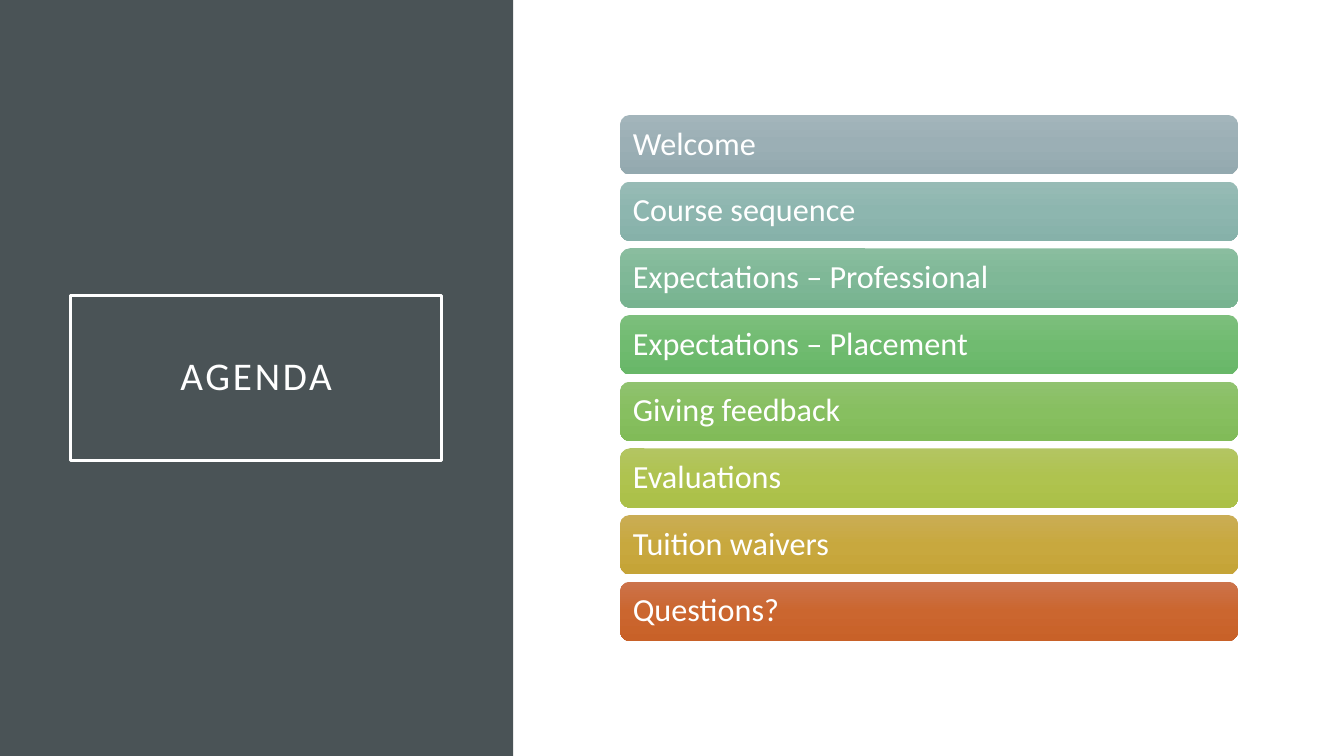
from copy import deepcopy

from pptx import Presentation
from pptx.dml.color import RGBColor
from pptx.enum.shapes import MSO_SHAPE
from pptx.enum.text import MSO_ANCHOR, PP_ALIGN
from pptx.oxml.ns import qn
from pptx.util import Inches, Pt

# Content: label, then top, middle and bottom colour of its bar
TITLE = "AGENDA"
ITEMS = [
    ("Welcome", "A3B5BB", "9BAFB5", "93A9AF"),
    ("Course sequence", "97BBB5", "8DB6AF", "86B1A9"),
    ("Expectations – Professional", "8ABD9F", "7FB897", "77B390"),
    ("Expectations – Placement", "7DBF7D", "70BB70", "68B768"),
    ("Giving feedback", "90C26F", "87BF60", "81BB58"),
    ("Evaluations", "B3C562", "AFC34F", "ABC047"),
    ("Tuition waivers", "CAAD55", "C8A83E", "C5A437"),
    ("Questions?", "CC734B", "CB662F", "C86128"),
]
WHITE = RGBColor(0xFF, 0xFF, 0xFF)
SLATE = RGBColor(0x4A, 0x53, 0x56)
FONT = "Calibri"

# Layout in inches
LEFT, WIDTH, HEIGHT = 6.15, 6.13, 0.59
FIRST, LAST = 1.14, 5.77
STEP = (LAST - FIRST) / (len(ITEMS) - 1)


def add_box(kind, left, top, width, height):
    box = slide.shapes.add_shape(
        kind, Inches(left), Inches(top), Inches(width), Inches(height))
    box.shadow.inherit = False
    box.line.fill.background()
    return box


def set_text(box, text, size, align, inset):
    frame = box.text_frame
    frame.text = text
    frame.word_wrap = True
    frame.vertical_anchor = MSO_ANCHOR.MIDDLE
    frame.margin_left = frame.margin_right = Inches(inset)
    frame.margin_top = frame.margin_bottom = Inches(0.1)
    para = frame.paragraphs[0]
    para.alignment = align
    para.line_spacing = 0.9
    run = para.runs[0]
    run.font.name = FONT
    run.font.size = Pt(size)
    run.font.color.rgb = WHITE
    return run


def set_shade(box, colors):
    box.fill.gradient()
    box.fill.gradient_angle = 270
    # Add a middle stop to the two default ones
    stops = box._element.spPr.find(".//" + qn("a:gsLst"))
    stops.insert(1, deepcopy(stops[0]))
    stops[1].set("pos", "50000")
    for stop, color in zip(box.fill.gradient_stops, colors):
        stop.color.rgb = RGBColor.from_string(color)


deck = Presentation()
deck.slide_width, deck.slide_height = Inches(13.33), Inches(7.5)
slide = deck.slides.add_slide(deck.slide_layouts[6])

# Side panel
panel = add_box(MSO_SHAPE.RECTANGLE, 0, 0, 5.09, 7.5)
panel.fill.solid()
panel.fill.fore_color.rgb = SLATE

# Framed title
title = add_box(MSO_SHAPE.RECTANGLE, 0.7, 2.93, 3.68, 1.64)
title.fill.background()
title.line.color.rgb = WHITE
title.line.width = Pt(2.5)
run = set_text(title, TITLE, 28, PP_ALIGN.CENTER, 0.2)
run._r.get_or_add_rPr().set("spc", "200")

# Agenda bars
for row, (label, *colors) in enumerate(ITEMS):
    bar = add_box(MSO_SHAPE.ROUNDED_RECTANGLE,
                  LEFT, FIRST + row * STEP, WIDTH, HEIGHT)
    set_shade(bar, colors)
    # The rounded corners add a little to the inset
    set_text(bar, label, 23, PP_ALIGN.LEFT, 0.1)

deck.save("out.pptx")
